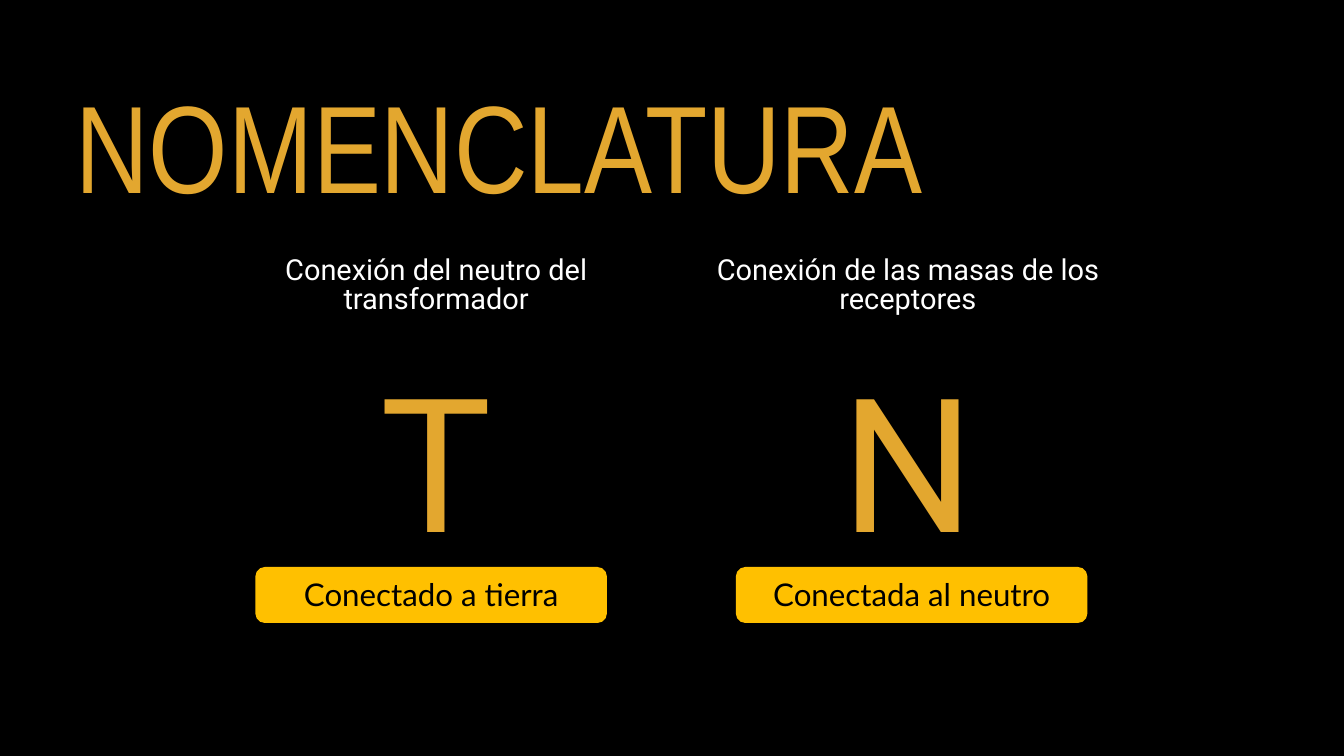
from pptx import Presentation
from pptx.dml.color import RGBColor
from pptx.enum.shapes import MSO_SHAPE
from pptx.enum.text import MSO_ANCHOR, MSO_AUTO_SIZE, PP_ALIGN
from pptx.util import Inches, Pt

ROUNDED = MSO_SHAPE.ROUNDED_RECTANGLE
TOP, NO_FIT = MSO_ANCHOR.TOP, MSO_AUTO_SIZE.NONE
LEFT, CENTER = PP_ALIGN.LEFT, PP_ALIGN.CENTER

THEME = {
    "background": RGBColor.from_string("000000"),
    "bar": RGBColor.from_string("FFC000"),
    "title": dict(font="Arial Narrow", size=133.2, spacing=134.5, color="E3A72F"),
    "heading": dict(font="Roboto", size=31, spacing=31.3, color="FFFFFF"),
    "letter": dict(font="Roboto", size=200, spacing=280, color="E3A72F"),
    "label": dict(font="Lato", size=33.5, spacing=33.9, color="000000"),
}

prs = Presentation()
prs.slide_width, prs.slide_height = Inches(20), Inches(11.25)
COL, ROW = prs.slide_width / 100, prs.slide_height / 100


def grid(center, top, width, height):
    return (int((center - width / 2) * COL), int(top * ROW),
            int(width * COL), int(height * ROW))


def write(sp, text, *, font, size, spacing, color, align=CENTER):
    tf = sp.text_frame
    tf.word_wrap, tf.auto_size, tf.vertical_anchor = True, NO_FIT, TOP
    tf.margin_left = tf.margin_top = tf.margin_right = tf.margin_bottom = 0
    p = tf.paragraphs[0]
    p.alignment, p.line_spacing = align, Pt(spacing)
    r = p.add_run()
    r.text = text
    r.font.name, r.font.size = font, Pt(size)
    r.font.color.rgb = RGBColor.from_string(color)


s = prs.slides.add_slide(prs.slide_layouts[5])
s.background.fill.solid()
s.background.fill.fore_color.rgb = THEME["background"]

title = s.shapes.title
title.left, title.top, title.width, title.height = grid(40.33, 12.27, 69.45, 17.5)
write(title, "NOMENCLATURA", align=LEFT, **THEME["title"])

columns = [
    (32.45, 32.08, "Conexión del neutro del transformador", "T", "Conectado a tierra"),
    (67.55, 67.83, "Conexión de las masas de los receptores", "N", "Conectada al neutro"),
]
for center, bar_center, heading, letter, label in columns:
    bar = s.shapes.add_shape(ROUNDED, *grid(bar_center, 75, 26.15, 7.4))
    bar.shadow.inherit = False
    bar.fill.solid()
    bar.fill.fore_color.rgb = THEME["bar"]
    bar.line.fill.background()

    for kind, text, box in (
        ("heading", heading, grid(center, 33.96, 32.35, 8.7)),
        ("letter", letter, grid(center, 40.8, 19.6, 38)),
        ("label", label, grid(bar_center, 76.8, 22.65, 4.35)),
    ):
        write(s.shapes.add_textbox(*box), text, **THEME[kind])

prs.save("out.pptx")
